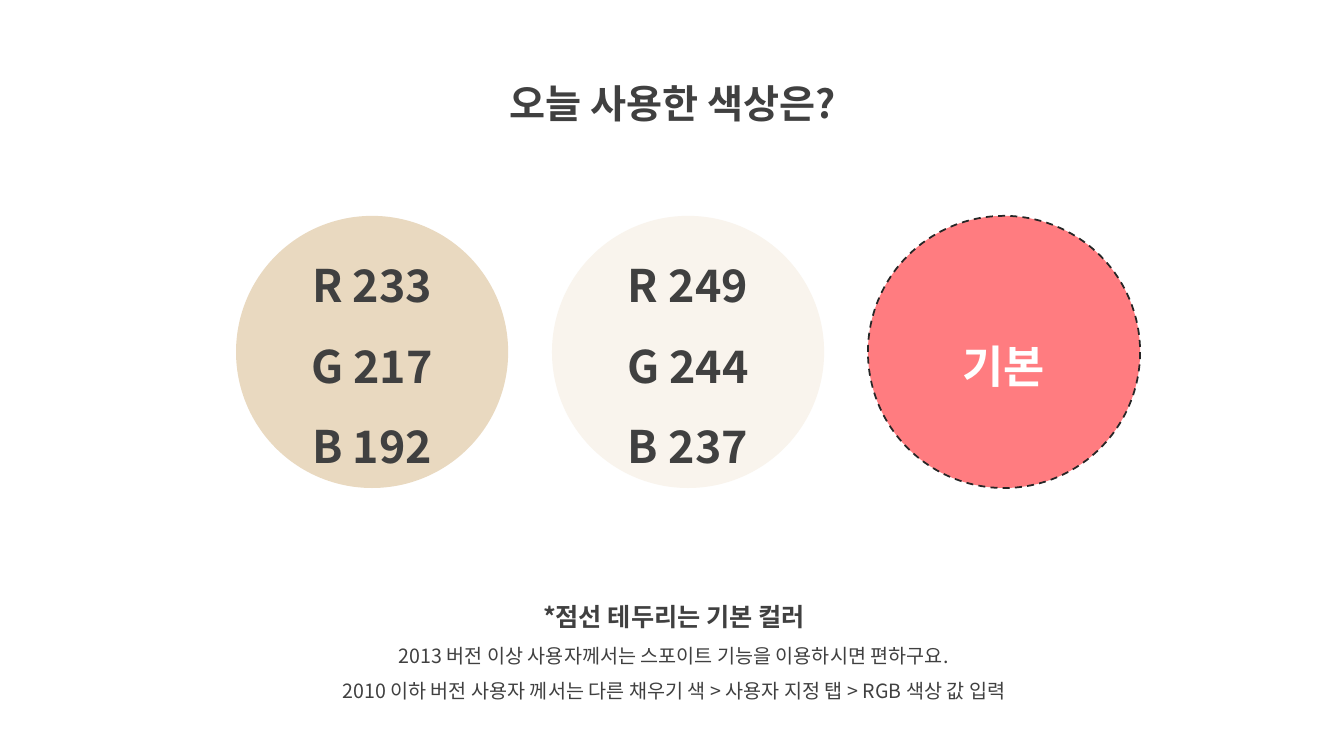
from lxml.etree import SubElement
from pptx import Presentation
from pptx.dml.color import RGBColor
from pptx.enum.dml import MSO_LINE
from pptx.enum.shapes import MSO_SHAPE
from pptx.enum.text import MSO_ANCHOR, MSO_AUTO_SIZE, PP_ALIGN
from pptx.oxml.ns import qn
from pptx.util import Pt


def paint(color, code):
    color.rgb = RGBColor.from_string(code)


class Board:
    font = "Noto Sans CJK KR"
    dark = "404040"
    edge = "262626"

    def __init__(self, slide):
        self.slide = slide

    def letter(self, frame, rows, ink):
        frame.word_wrap = True
        frame.text = "\n".join(text for text, size, bold in rows)
        for para, (text, size, bold) in zip(frame.paragraphs, rows):
            para.alignment = PP_ALIGN.CENTER
            para.line_spacing = 1.5
            for run in para.runs:
                run.font.size = Pt(size)
                run.font.bold = bold
                run.font.name = self.font
                paint(run.font.color, ink)
                SubElement(run._r.get_or_add_rPr(), qn("a:ea"), typeface=self.font)

    def label(self, left, top, width, height, rows):
        box = self.slide.shapes.add_textbox(Pt(left), Pt(top), Pt(width), Pt(height))
        self.letter(box.text_frame, rows, self.dark)
        box.text_frame.auto_size = MSO_AUTO_SIZE.SHAPE_TO_FIT_TEXT

    def circle(self, left, top, size, fill, lines, ink, dashed):
        disc = self.slide.shapes.add_shape(
            MSO_SHAPE.OVAL, Pt(left), Pt(top), Pt(size), Pt(size))
        disc.shadow.inherit = False
        disc.fill.solid()
        paint(disc.fill.fore_color, fill)
        if dashed:
            disc.line.width = Pt(1.25)
            paint(disc.line.color, self.edge)
            disc.line.dash_style = MSO_LINE.DASH
        else:
            disc.line.fill.background()
        disc.text_frame.vertical_anchor = MSO_ANCHOR.MIDDLE
        self.letter(disc.text_frame, [(line, 32, True) for line in lines], ink)


def main():
    deck = Presentation()
    deck.slide_width, deck.slide_height = Pt(960), Pt(540)
    board = Board(deck.slides.add_slide(deck.slide_layouts[6]))

    board.label(313.9, 36, 333.4, 51.8, [("오늘 사용한 색상은?", 28, True)])
    board.label(193.7, 415.4, 575.3, 90.7, [
        ("*점선 테두리는 기본 컬러", 18, True),
        ("2013 버전 이상 사용자께서는 스포이트 기능을 이용하시면 편하구요.", 14, False),
        ("2010 이하 버전 사용자 께서는 다른 채우기 색 > 사용자 지정 탭 > RGB 색상 값 입력", 14, False),
    ])

    discs = [
        ("E9D9C0", ["R 233", "G 217", "B 192"], board.dark, False),
        ("F9F4ED", ["R 249", "G 244", "B 237"], board.dark, False),
        ("FF7C80", ["기본"], "FFFFFF", True),
    ]
    for index, disc in enumerate(discs):
        board.circle(168.6 + index * 225.7, 154.2, 194.4, *disc)

    deck.save("out.pptx")


if __name__ == "__main__":
    main()
